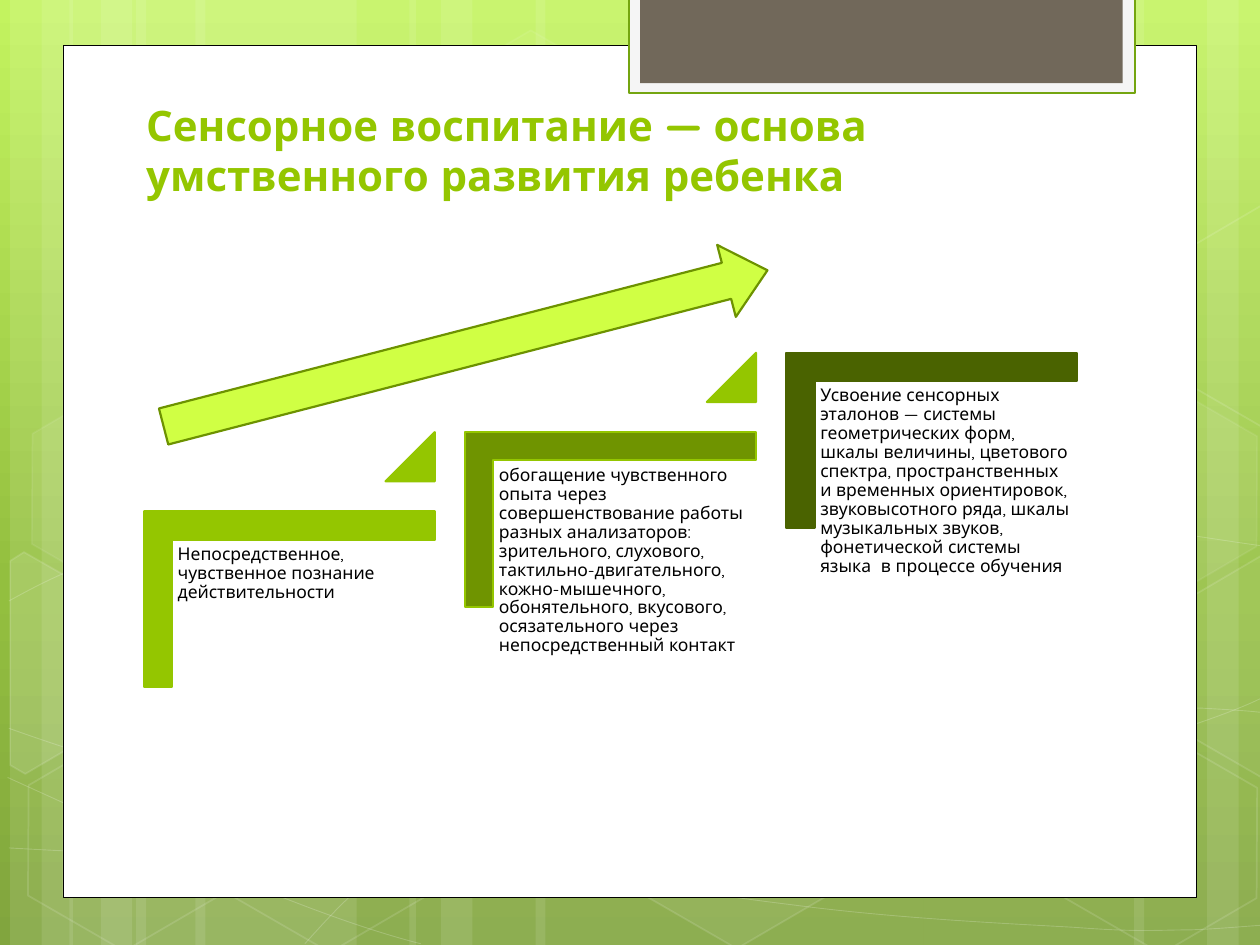
import copy
import math
from dataclasses import dataclass

import pptx
import pptx.util
from lxml import etree
from pptx.dml.color import RGBColor
from pptx.enum.shapes import MSO_SHAPE
from pptx.enum.text import MSO_ANCHOR, MSO_AUTO_SIZE, PP_ALIGN
from pptx.oxml.ns import qn
from pptx.util import Inches


@dataclass(frozen=True)
class Theme:
    font: str = "Quicksand"
    title_size: int = 24
    body_size: int = 10
    white: str = "FFFFFF"
    black: str = "000000"
    accent: str = "94C600"
    middle: str = "6F9400"
    dark: str = "4A6300"
    arrow: str = "D0FF44"
    arrow_edge: str = "6D9200"
    tab: str = "71685A"
    tab_frame: str = "F5F5F5"
    tab_edge: str = "74A510"
    backdrop: tuple = ((0, "C3F35F"), (0.62, "93BF3F"), (1, "81A53E"))


THEME = Theme()

# left, width, rotation
STRIPES = [(1.08, 1.75, 0), (0.08, 0.5, 0), (0.33, 0.83, 0), (1.55, 1.75, 0), (0.55, 0.5, 0), (0.8, 0.83, 0),
           (7.33, 1.75, 180), (9.58, 0.5, 180), (9, 0.83, 180), (4.25, 3.08, 0), (3.25, 0.5, 0), (3.5, 0.83, 0)]

# start point, then segments: two handles and an end point for a curve, an end point for a line
WAVES = [
    ((0.07, 6.73), [((0.61, 6.76), (1.15, 6.79), (1.9, 6.78)), ((2.65, 6.77), (3.58, 6.75), (4.58, 6.65)),
                    ((5.58, 6.55), (7, 6.36), (7.92, 6.17)), ((8.83, 5.98), (9.77, 5.68), (10.07, 5.51))]),
    ((0.07, 4.77), [((0.36, 4.61), (0.65, 4.46), (1.21, 4.31)), ((1.78, 4.16), (2.59, 3.94), (3.47, 3.87)),
                    ((4.36, 3.8), (5.44, 3.79), (6.54, 3.87)), ((7.64, 3.95), (9.47, 4.26), (10.07, 4.34))]),
    ((0.06, 6.17), [((1.27, 6.72), (2.47, 7.27), (3.34, 7.49))]),
    ((0.07, 5.78), [((0.38, 5.89), (0.7, 6), (1.28, 6.16)), ((1.86, 6.31), (2.73, 6.56), (3.57, 6.73)),
                    ((4.4, 6.9), (5.45, 7.08), (6.28, 7.18)), ((7.11, 7.29), (8, 7.33), (8.53, 7.36)),
                    ((9.05, 7.4), (9.19, 7.38), (9.45, 7.38)), ((9.71, 7.37), (9.89, 7.35), (10.07, 7.34))]),
    ((2.42, 7.49), [((2.6, 7.29), (2.78, 7.09), (3.02, 6.91)), ((3.26, 6.73), (3.6, 6.53), (3.88, 6.39)),
                    ((4.16, 6.25), (4.33, 6.19), (4.7, 6.09)), ((5.06, 5.99), (5.73, 5.85), (6.08, 5.78)),
                    ((6.44, 5.71), (6.49, 5.71), (6.8, 5.69)), ((7.11, 5.66), (7.6, 5.63), (7.94, 5.62)),
                    ((8.29, 5.61), (8.86, 5.62), (8.86, 5.62)), ((9.53, 5.62),),
                    ((9.71, 5.63), (9.88, 5.64), (9.97, 5.65)), ((10.06, 5.66), (10.03, 5.65), (10.06, 5.66))]),
]

# left, top, fill opacity, edge opacity
HEXAGONS = [(3.34, 0.36, 4, 8), (4.97, 5.89, 6, 12), (0.11, 5.91, 0, 12), (0.14, 3.12, 7, 8),
            (1.74, 5.92, 0, 12), (7.53, 4.53, 10, 12), (8.34, 5.93, 0, 12), (8.34, 3.14, 7, 8)]
HEXAGON_TURN = 30

# fill opacity, centre, corners of a hexagon cut by the slide edge
CUT_HEXAGONS = [
    (10, (0.36, 5.35), [(0.08, 4.45), (0.19, 4.38), (0.96, 4.82), (0.95, 5.7), (0.2, 6.14), (0.08, 6.07)]),
    (4, (9.85, 5.2), [(9.26, 4.85), (10.01, 4.41), (10.09, 4.46), (10.09, 6.13), (10.02, 6.17), (9.26, 5.73)]),
    (0, (9.85, 2.41), [(9.26, 2.07), (10.01, 1.63), (10.1, 1.68), (10.09, 3.35), (10.02, 3.39), (9.26, 2.95)]),
]

# fill, edge, text
STEPS = [
    (THEME.accent, THEME.accent, "Непосредственное, чувственное познание действительности"),
    (THEME.middle, THEME.accent, "обогащение чувственного опыта через совершенствование работы разных "
     "анализаторов: зрительного, слухового, тактильно-двигательного, кожно-мышечного, обонятельного, "
     "вкусового, осязательного через непосредственный контакт"),
    (THEME.dark, THEME.dark, "Усвоение сенсорных эталонов — системы геометрических форм, шкалы величины, "
     "цветового спектра, пространственных и временных ориентировок, звуковысотного ряда, "
     "шкалы музыкальных звуков, фонетической системы языка  в процессе обучения"),
]
STEP_RIGHT, STEP_UP = 2.55, 0.63


def set_color(fill, color, opacity):
    """Fill with a colour at an opacity in percent; zero leaves no fill."""
    if not color or not opacity:
        fill.background()
        return
    fill.solid()
    fill.fore_color.rgb = RGBColor.from_string(color)
    if opacity < 100:
        color_node = fill._xPr.find(qn("a:solidFill"))[0]
        etree.SubElement(color_node, qn("a:alpha"), val=str(opacity * 1000))


def paint(shape, fill=None, opacity=100, edge=None, edge_width=1.25, edge_opacity=100):
    shape.shadow.inherit = False
    set_color(shape.fill, fill, opacity)
    set_color(shape.line.fill, edge, edge_opacity)
    if edge:
        shape.line.width = pptx.util.Pt(edge_width)


def add_preset(slide, preset, left, top, width, height, rotation=0, adjust=(), **look):
    shape = slide.shapes.add_shape(preset, *map(Inches, (left, top, width, height)))
    shape.rotation = rotation
    for index, value in enumerate(adjust):
        shape.adjustments[index] = value
    paint(shape, **look)


def add_outline(slide, start, points, closed, **look):
    builder = slide.shapes.build_freeform(*map(Inches, start))
    builder.add_line_segments([(Inches(x), Inches(y)) for x, y in points], close=closed)
    shape = builder.convert_to_shape()
    paint(shape, **look)
    return shape


def add_wave(slide, start, segments):
    """Draw the handles and ends as lines, then join each three into a curve."""
    points = [point for segment in segments for point in segment]
    wave = add_outline(slide, start, points, False, edge=THEME.white, edge_width=0.5, edge_opacity=20)
    lines = iter(wave._element.findall(".//" + qn("a:lnTo")))
    for segment in segments:
        parts = [next(lines) for _ in segment]
        if len(parts) == 3:
            curve = etree.Element(qn("a:cubicBezTo"))
            parts[0].addprevious(curve)
            for part in parts:
                curve.append(part[0])
                part.getparent().remove(part)


def add_cut_hexagon(slide, opacity, centre, corners):
    """Turn the corners back about the centre, so that the shape's rotation restores them."""
    cos, sin = math.cos(math.radians(HEXAGON_TURN)), math.sin(math.radians(HEXAGON_TURN))
    offsets = [(x - centre[0], y - centre[1]) for x, y in corners]
    upright = [(centre[0] + dx * cos + dy * sin, centre[1] - dx * sin + dy * cos) for dx, dy in offsets]
    shape = add_outline(slide, upright[0], upright[1:], True, fill=THEME.white, opacity=opacity,
                        edge=THEME.white, edge_width=1, edge_opacity=12)
    shape.rotation = HEXAGON_TURN


def write_text(holder, text, *, size, color, bold=False, spacing=0.9, anchor=MSO_ANCHOR.TOP, insets=(0.04,) * 4):
    frame = holder.text_frame
    frame.word_wrap = True
    frame.auto_size = MSO_AUTO_SIZE.NONE
    frame.vertical_anchor = anchor
    frame.margin_left, frame.margin_top, frame.margin_right, frame.margin_bottom = map(Inches, insets)
    paragraph = frame.paragraphs[0]
    paragraph.alignment = PP_ALIGN.LEFT
    paragraph.line_spacing = spacing
    run = paragraph.add_run()
    run.text = text
    run.font.name, run.font.size, run.font.bold = THEME.font, pptx.util.Pt(size), bold
    run.font.color.rgb = RGBColor.from_string(color)


def set_backdrop(slide):
    fill = slide.background.fill
    fill.gradient()
    fill.gradient_angle = 270
    stop_list = slide._element.find(".//" + qn("a:gsLst"))
    stop_list.append(copy.deepcopy(stop_list[0]))
    for stop, (position, color) in zip(fill.gradient_stops, THEME.backdrop):
        stop.position, stop.color.rgb = position, RGBColor.from_string(color)


def add_decoration(slide):
    for left, width, turn in STRIPES:
        add_preset(slide, MSO_SHAPE.RECTANGLE, left, 0, width, 7.5, turn, fill=THEME.white, opacity=10)
    for wave in WAVES:
        add_wave(slide, *wave)
    for left, top, opacity, edge_opacity in HEXAGONS:
        add_preset(slide, MSO_SHAPE.HEXAGON, left, top, 1.75, 1.52, HEXAGON_TURN, (0.285, 1.155), fill=THEME.white,
                   opacity=opacity, edge=THEME.white, edge_width=1, edge_opacity=edge_opacity)
    for hexagon in CUT_HEXAGONS:
        add_cut_hexagon(slide, *hexagon)


def add_panel(slide):
    box = MSO_SHAPE.RECTANGLE
    add_preset(slide, box, 0.5, 0.36, 9, 6.76, fill=THEME.white, edge=THEME.black, edge_width=0.5)
    add_preset(slide, box, 4.99, -0.02, 4.02, 0.76, fill=THEME.tab_frame, edge=THEME.tab_edge)
    add_preset(slide, box, 5.08, -0.02, 3.83, 0.68, fill=THEME.tab)


def add_title(slide, text):
    """Format the title placeholder and bring it in front of the panel."""
    title = slide.shapes.title
    title.left, title.top, title.width, title.height = map(Inches, (1.06, 0.79, 7.68, 1.25))
    write_text(title, text, size=THEME.title_size, color=THEME.accent, bold=True, spacing=1,
               anchor=MSO_ANCHOR.BOTTOM, insets=(0.1, 0.05, 0.1, 0.45))
    slide.shapes._spTree.append(title._element)


def add_step(slide, index, fill, edge, text):
    right, up = index * STEP_RIGHT, index * STEP_UP
    add_preset(slide, MSO_SHAPE.CORNER, 1.6 + right, 3.6 - up, 1.39, 2.31, 90, (0.161,) * 2, fill=fill, edge=edge)
    label = slide.shapes.add_textbox(*map(Inches, (1.37 + right, 4.29 - up, 2.08, 1.82)))
    write_text(label, text, size=THEME.body_size, color=THEME.black)
    if index < len(STEPS) - 1:
        add_preset(slide, MSO_SHAPE.ISOSCELES_TRIANGLE, 3.06 + right, 3.43 - up, 0.39, 0.39,
                   adjust=(1,), fill=THEME.accent, edge=THEME.accent)


def main():
    deck = pptx.Presentation()
    deck.slide_width, deck.slide_height = Inches(10), Inches(7.5)
    slide = deck.slides.add_slide(deck.slide_layouts[5])
    set_backdrop(slide)
    add_decoration(slide)
    add_panel(slide)
    add_title(slide, "Сенсорное воспитание — основа умственного развития ребенка")
    for index, step in enumerate(STEPS):
        add_step(slide, index, *step)
    add_preset(slide, MSO_SHAPE.RIGHT_ARROW, 1.22, 2.47, 4.95, 0.59, 345.5, (0.5, 0.569),
               fill=THEME.arrow, edge=THEME.arrow_edge)
    deck.save("out.pptx")


if __name__ == "__main__":
    main()
